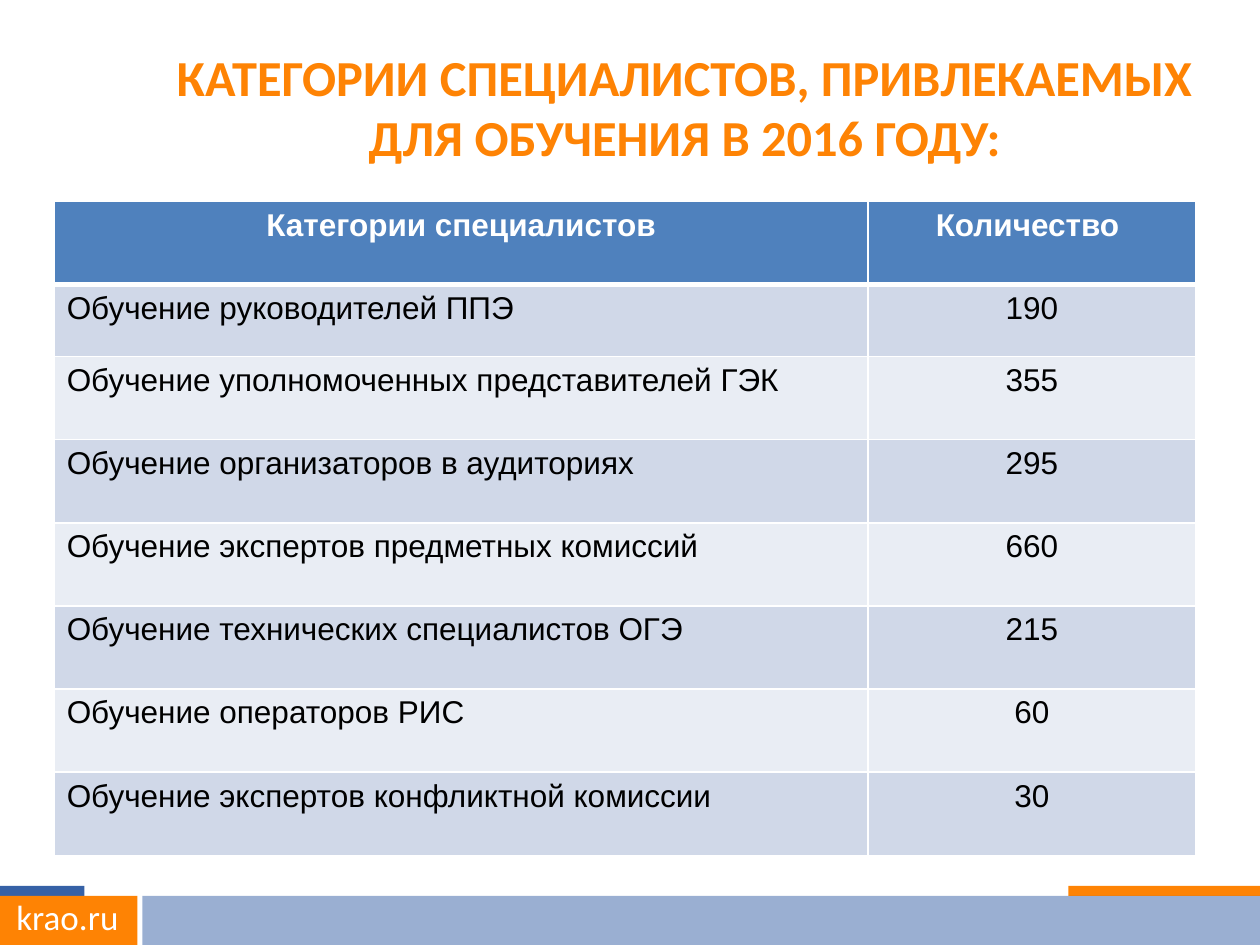
from lxml.etree import SubElement
from pptx import Presentation
from pptx.dml.color import RGBColor
from pptx.enum.shapes import MSO_SHAPE
from pptx.enum.text import MSO_ANCHOR, PP_ALIGN
from pptx.oxml.ns import qn
from pptx.util import Inches, Pt

ORANGE, BLUE, WHITE, BLACK = "FE8304", "3661A6", "FFFFFF", "000000"
HEADER, BAND_DARK, BAND_LIGHT = "4F81BD", "D0D8E8", "E9EDF4"

ROWS = [
    ("Категории специалистов", "Количество "),
    ("Обучение руководителей ППЭ", "190"),
    ("Обучение уполномоченных представителей ГЭК", "355"),
    ("Обучение организаторов в аудиториях", "295"),
    ("Обучение экспертов предметных комиссий", "660"),
    ("Обучение технических специалистов ОГЭ", "215"),
    ("Обучение операторов РИС", "60"),
    ("Обучение экспертов конфликтной комиссии", "30"),
]


def rgb(value):
    return RGBColor.from_string(value)


class SlideBuilder:
    def __init__(self, slide, heading_font="Calibri", body_font="Arial"):
        self.slide = slide
        self.heading_font = heading_font
        self.body_font = body_font

    def style(self, p, font, size, color, bold=False, align=PP_ALIGN.CENTER):
        p.alignment = align
        for r in p.runs:
            r.font.name = font
            r.font.size = Pt(size)
            r.font.bold = bold
            r.font.color.rgb = rgb(color)

    def rect(self, x, y, w, h, color, opacity=100):
        sp = self.slide.shapes.add_shape(
            MSO_SHAPE.RECTANGLE, Inches(x), Inches(y), Inches(w), Inches(h))
        sp.shadow.inherit = False
        sp.fill.solid()
        sp.fill.fore_color.rgb = rgb(color)
        sp.line.fill.background()
        if opacity < 100:
            clr = sp.fill._xPr.find(qn("a:solidFill"))[0]
            SubElement(clr, qn("a:alpha"), val=str(opacity * 1000))

    def text(self, x, y, w, h, text, size, color, bold=False, anchor=MSO_ANCHOR.TOP):
        tf = self.slide.shapes.add_textbox(
            Inches(x), Inches(y), Inches(w), Inches(h)).text_frame
        tf.word_wrap = True
        tf.vertical_anchor = anchor
        tf.text = text
        self.style(tf.paragraphs[0], self.heading_font, size, color, bold)

    def borders(self, cell, bottom, top):
        tc_pr = cell._tc.get_or_add_tcPr()
        for side, width in (("L", 1), ("R", 1), ("T", top), ("B", bottom)):
            ln = SubElement(tc_pr, qn(f"a:ln{side}"), w=str(Pt(width)))
            SubElement(SubElement(ln, qn("a:solidFill")), qn("a:srgbClr"), val=WHITE)

    def table(self, x, y, col_widths, row_heights, rows):
        table = self.slide.shapes.add_table(
            len(rows), len(col_widths), Inches(x), Inches(y),
            Inches(sum(col_widths)), Inches(sum(row_heights))).table
        for col, width in zip(table.columns, col_widths):
            col.width = Inches(width)
        for i, (values, height) in enumerate(zip(rows, row_heights)):
            table.rows[i].height = Inches(height)
            is_header = i == 0
            fill = HEADER if is_header else BAND_DARK if i % 2 else BAND_LIGHT
            for j, value in enumerate(values):
                cell = table.cell(i, j)
                self.borders(cell, 3 if is_header else 1, 3 if i == 1 else 1)
                cell.fill.solid()
                cell.fill.fore_color.rgb = rgb(fill)
                cell.text = value
                align = PP_ALIGN.CENTER if is_header or j else PP_ALIGN.LEFT
                self.style(cell.text_frame.paragraphs[0], self.body_font, 18,
                           WHITE if is_header else BLACK, is_header, align)


def main():
    prs = Presentation()
    prs.slide_width, prs.slide_height = Inches(10), Inches(7.5)
    s = SlideBuilder(prs.slides.add_slide(prs.slide_layouts[6]))

    # Footer bars and site address
    s.rect(0, 7.03, 0.67, 0.08, BLUE)
    s.rect(8.48, 7.03, 1.52, 0.08, ORANGE)
    s.rect(0, 7.11, 1.09, 0.39, ORANGE)
    s.rect(1.13, 7.11, 8.87, 0.39, BLUE, opacity=50)
    s.text(0, 7.06, 1.07, 0.44, "krao.ru", 20, WHITE)

    # Title
    s.text(1.1, 0.26, 8.67, 1.17,
           "КАТЕГОРИИ СПЕЦИАЛИСТОВ, ПРИВЛЕКАЕМЫХ ДЛЯ ОБУЧЕНИЯ В 2016 ГОДУ:",
           28.8, ORANGE, bold=True, anchor=MSO_ANCHOR.MIDDLE)

    # Specialist categories
    s.table(0.43, 1.6, [6.46, 2.6], [0.66, 0.57] + [0.66] * 6, ROWS)

    prs.save("out.pptx")


if __name__ == "__main__":
    main()
